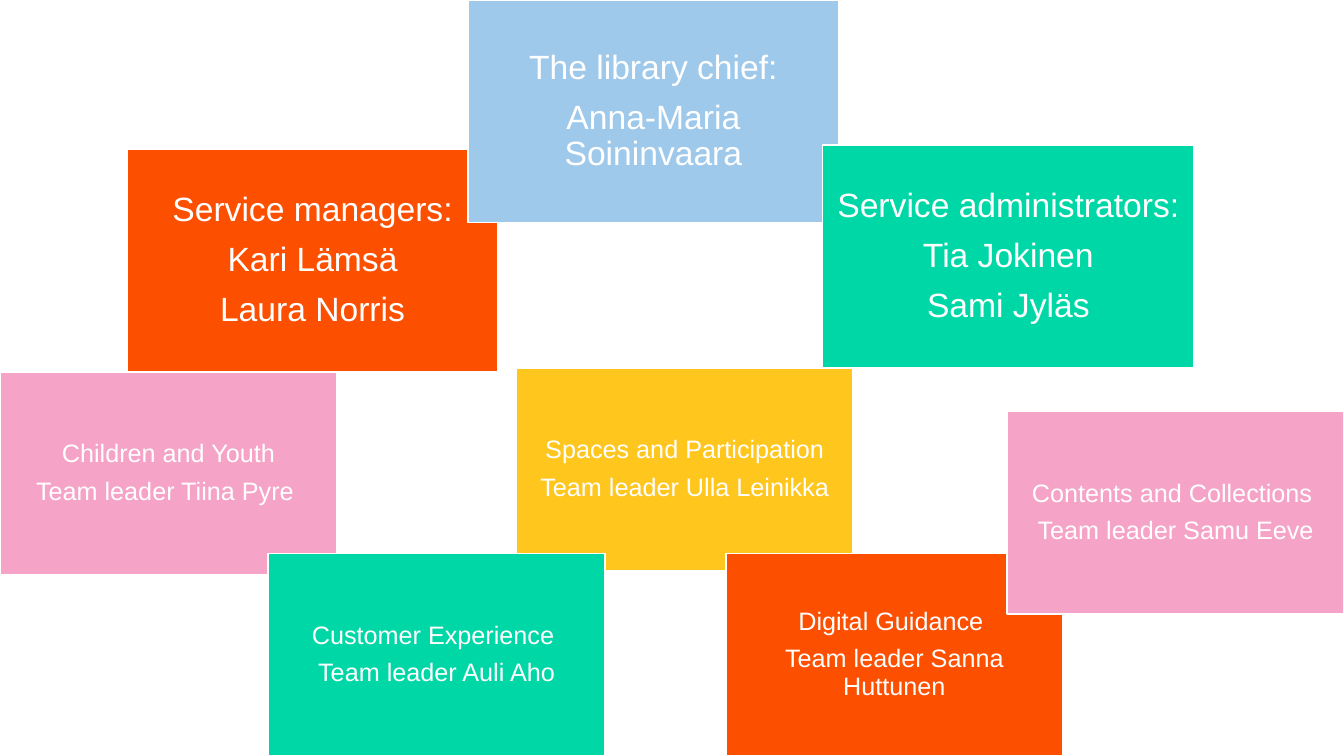
from dataclasses import dataclass

from pptx import Presentation
from pptx.dml.color import RGBColor
from pptx.enum.shapes import MSO_SHAPE
from pptx.enum.text import MSO_ANCHOR, PP_ALIGN
from pptx.util import Inches, Pt

RECTANGLE = MSO_SHAPE.RECTANGLE
MIDDLE = MSO_ANCHOR.MIDDLE
CENTER = PP_ALIGN.CENTER

SLIDE_WIDTH = Inches(13.33)
SLIDE_HEIGHT = Inches(7.5)
COLORS = {
    "white": "FFFFFF",
    "orange": "FD4F00",
    "blue": "9FC9EB",
    "pink": "F5A3C7",
    "yellow": "FFC61E",
    "green": "00D7A7",
}


@dataclass
class CardStyle:
    """Width and height are percentages of the slide's size."""
    width: float
    height: float
    font_size: int
    inset: float


MANAGEMENT = CardStyle(27.61, 29.47, 24, 0.1)
TEAM = CardStyle(25.06, 26.8, 18, 0.07)
RIGHT_EDGE = 100 - TEAM.width
BOTTOM_EDGE = 100 - TEAM.height

# Style, left and top in percent of the slide, fill, lines; from back to front
CARDS = [
    (MANAGEMENT, 9.45, 19.73, "orange",
     ["Service managers:", "Kari Lämsä", "Laura Norris"]),
    (MANAGEMENT, 34.81, 0, "blue",
     ["The library chief:", "Anna-Maria Soininvaara"]),
    (TEAM, 0, 49.2, "pink",
     ["Children and Youth", "Team leader Tiina Pyre "]),
    (TEAM, 38.41, 48.67, "yellow",
     ["Spaces and Participation", "Team leader Ulla Leinikka"]),
    (TEAM, 19.95, BOTTOM_EDGE, "green",
     ["Customer Experience ", "Team leader Auli Aho"]),
    (TEAM, 54.01, BOTTOM_EDGE, "orange",
     ["Digital Guidance ", "Team leader Sanna Huttunen"]),
    (MANAGEMENT, 61.22, 19.2, "green",
     ["Service administrators:", "Tia Jokinen", "Sami Jyläs"]),
    (TEAM, RIGHT_EDGE, 54.4, "pink",
     ["Contents and Collections ", "Team leader Samu Eeve"]),
]


def color(name):
    return RGBColor.from_string(COLORS[name])


def across(percent):
    return round(SLIDE_WIDTH * percent / 100)


def down(percent):
    return round(SLIDE_HEIGHT * percent / 100)


def write_lines(text_frame, lines, style):
    text_frame.word_wrap = True
    text_frame.vertical_anchor = MIDDLE
    text_frame.margin_left = text_frame.margin_right = Inches(style.inset)
    text_frame.margin_top = text_frame.margin_bottom = Inches(style.inset)
    text_frame.text = "\n".join(lines)
    for paragraph in text_frame.paragraphs:
        paragraph.alignment = CENTER
        paragraph.line_spacing = 0.9
        paragraph.space_after = Pt(style.font_size * 0.4)
        paragraph.font.name = "Arial"
        paragraph.font.size = Pt(style.font_size)
        paragraph.font.color.rgb = color("white")


def add_card(slide, style, left, top, fill, lines):
    shape = slide.shapes.add_shape(
        RECTANGLE, across(left), down(top),
        across(style.width), down(style.height))
    shape.shadow.inherit = False
    shape.fill.solid()
    shape.fill.fore_color.rgb = color(fill)
    shape.line.color.rgb = color("white")
    shape.line.width = Pt(1)
    write_lines(shape.text_frame, lines, style)


def main():
    presentation = Presentation()
    presentation.slide_width = SLIDE_WIDTH
    presentation.slide_height = SLIDE_HEIGHT
    slide = presentation.slides.add_slide(presentation.slide_layouts[6])
    for card in CARDS:
        add_card(slide, *card)
    presentation.save("out.pptx")


if __name__ == "__main__":
    main()
